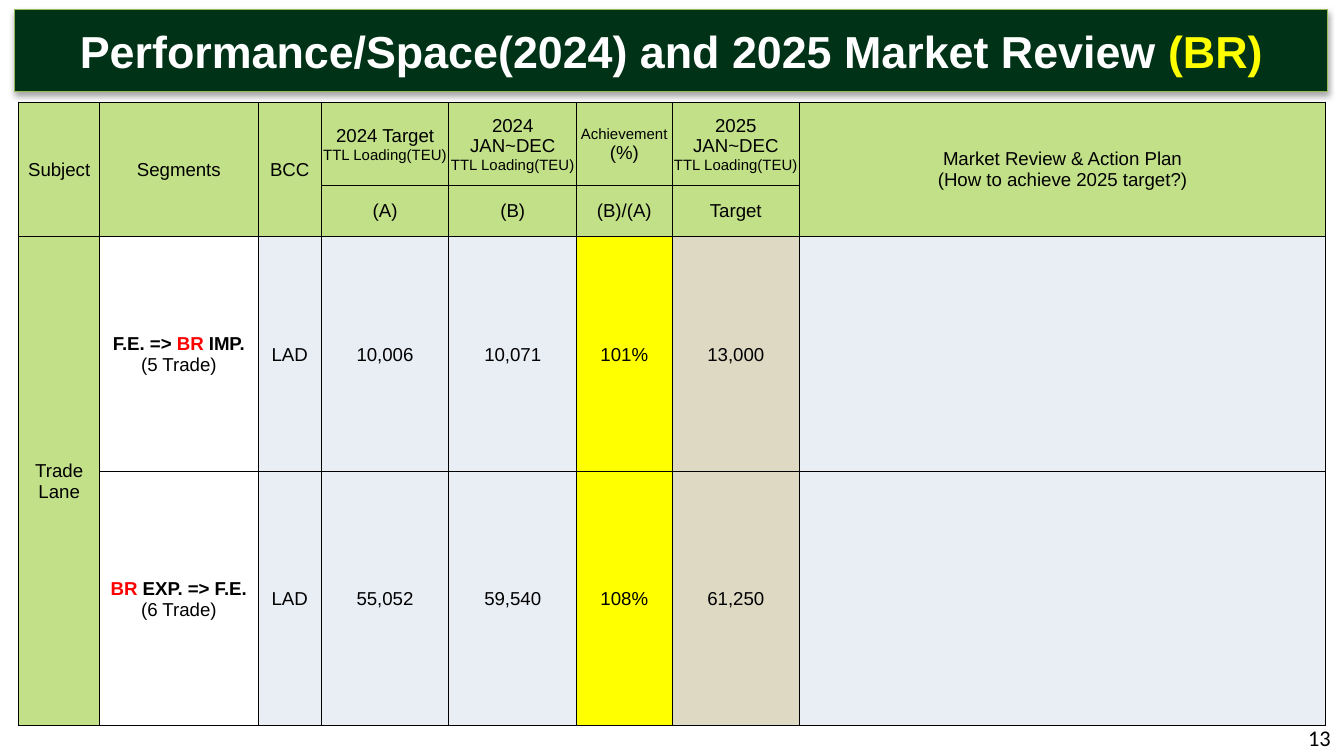
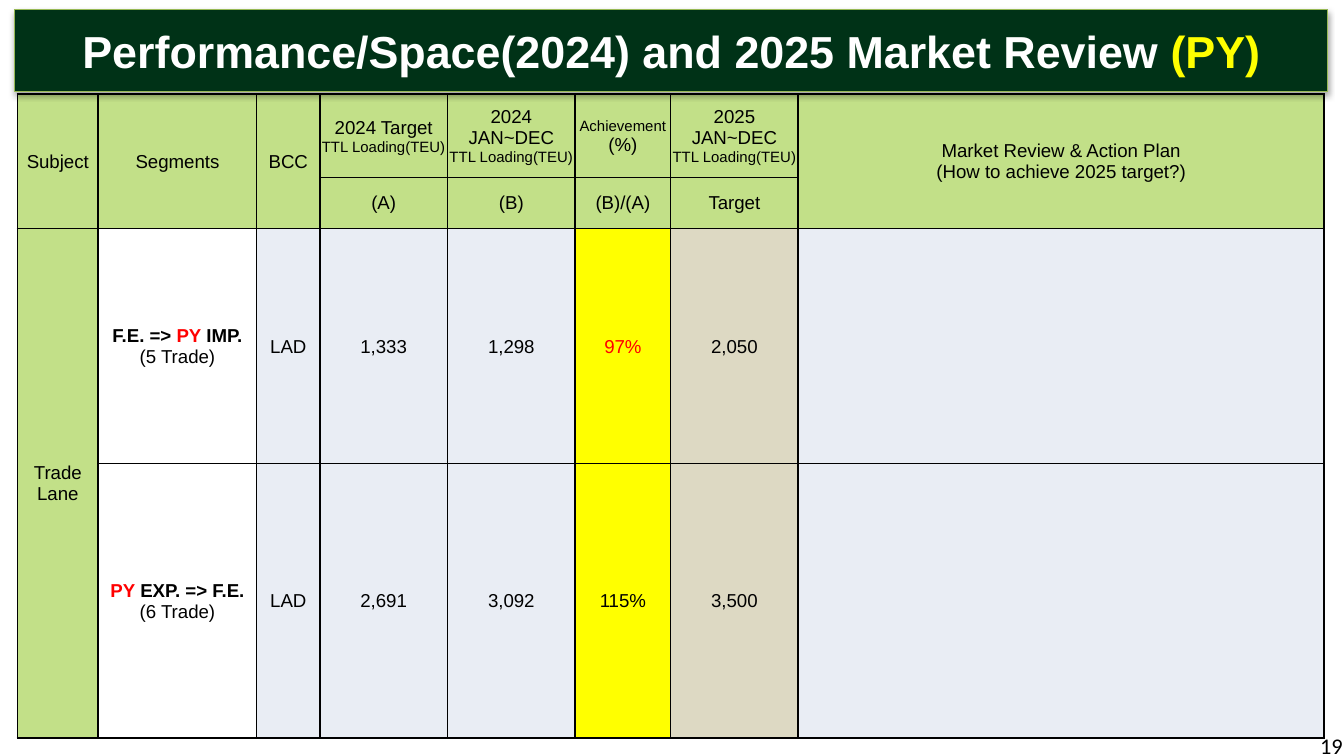
"""Build the 2024 performance and 2025 market review slides, one per country."""
from dataclasses import dataclass

from lxml.etree import Element, SubElement
from pptx import Presentation
from pptx.dml.color import RGBColor
from pptx.enum.shapes import MSO_SHAPE
from pptx.enum.text import MSO_ANCHOR, PP_ALIGN
from pptx.oxml.ns import qn
from pptx.slide import Slide
from pptx.table import Table, _Cell
from pptx.text.text import TextFrame
from pptx.util import Inches, Pt

COLORS = {
    "band": "003217",
    "band_edge": "98B955",
    "header": "C2E088",
    "body": "E9EDF4",
    "achievement": "FFFF00",
    "target": "DDD9C3",
    "alert": "FF0000",
    "black": "000000",
    "white": "FFFFFF",
}
COLUMN_WIDTHS = (0.6, 1.18, 0.47, 0.95, 0.95, 0.71, 0.95, 3.91)
HEADER_HEIGHTS = (0.62, 0.38)
BODY_FILLS = ("header", "white", "body", "body", "body", "achievement", "target", "body")


@dataclass(frozen=True)
class Piece:
    text: str
    size: int = 10
    color: str = "black"
    bold: bool = False
    font: str = "Arial"


Lines = list[list[Piece]]


@dataclass(frozen=True)
class Trade:
    target_2024: int
    loaded_2024: int
    target_2025: int


@dataclass(frozen=True)
class Review:
    country: str
    page: int
    page_at: tuple[float, float]
    table_at: tuple[float, float]
    trade_heights: tuple[float, float]
    border: float
    imports: Trade
    exports: Trade


LOADING = Piece("TTL Loading(TEU)", size=8)
TOP_HEADERS: list[Lines] = [
    [[Piece("Subject")]],
    [[Piece("Segments")]],
    [[Piece("BCC")]],
    [[Piece("2024 Target")], [LOADING]],
    [[Piece("2024 JAN~DEC")], [LOADING]],
    [[Piece("Achievement", size=8)], [Piece("(%)")]],
    [[Piece("2025 JAN~DEC")], [LOADING]],
    [[Piece("Market Review & Action Plan")], [Piece("(How to achieve 2025 target?)")]],
]
SUB_HEADERS = ("(A)", "(B)", "(B)/(A)", "Target")
REVIEWS = (
    Review("BR", 13, (7.67, 5.34), (0.14, 0.76), (1.75, 1.89), 0.5,
           Trade(10006, 10071, 13000), Trade(55052, 59540, 61250)),
    Review("PY", 19, (7.76, 5.4), (0.13, 0.7), (1.75, 2.04), 1,
           Trade(1333, 1298, 2050), Trade(2691, 3092, 3500)),
)


def rgb(name: str) -> RGBColor:
    return RGBColor.from_string(COLORS[name])


def write(frame: TextFrame, lines: Lines, align: PP_ALIGN = PP_ALIGN.CENTER) -> None:
    for index, line in enumerate(lines):
        paragraph = frame.paragraphs[0] if index == 0 else frame.add_paragraph()
        paragraph.alignment = align
        for piece in line:
            run = paragraph.add_run()
            run.text = piece.text
            run.font.name = piece.font
            run.font.size = Pt(piece.size)
            run.font.bold = piece.bold
            run.font.color.rgb = rgb(piece.color)


def style_cell(cell: _Cell, fill: str, border: float) -> None:
    cell.vertical_anchor = MSO_ANCHOR.MIDDLE
    cell.margin_left = cell.margin_right = cell.margin_top = Inches(0.01)
    cell.margin_bottom = Inches(0)
    cell.fill.solid()
    cell.fill.fore_color.rgb = rgb(fill)
    properties = cell._tc.get_or_add_tcPr()
    for position, side in enumerate(("lnL", "lnR", "lnT", "lnB")):
        edge = Element(qn(f"a:{side}"), w=str(Pt(border)))
        paint = SubElement(edge, qn("a:solidFill"))
        SubElement(paint, qn("a:srgbClr"), val=COLORS["black"])
        properties.insert(position, edge)


def trade_cells(segment: Lines, trade: Trade) -> list[Lines]:
    ratio = trade.loaded_2024 / trade.target_2024
    achievement = Piece(f"{ratio:.0%}", color="alert" if ratio < 1 else "black")
    return [
        segment,
        [[Piece("LAD")]],
        [[Piece(f"{trade.target_2024:,}")]],
        [[Piece(f"{trade.loaded_2024:,}")]],
        [[achievement]],
        [[Piece(f"{trade.target_2025:,}")]],
    ]


def fill_row(table: Table, row: int, first_column: int, contents: list[Lines]) -> None:
    for column, lines in enumerate(contents, first_column):
        write(table.cell(row, column).text_frame, lines)


def add_review_table(slide: Slide, review: Review) -> None:
    heights = HEADER_HEIGHTS + review.trade_heights
    left, top = map(Inches, review.table_at)
    table = slide.shapes.add_table(
        len(heights), len(COLUMN_WIDTHS), left, top,
        Inches(sum(COLUMN_WIDTHS)), Inches(sum(heights)),
    ).table
    table.first_row = table.horz_banding = False
    for column, width in zip(table.columns, COLUMN_WIDTHS):
        column.width = Inches(width)
    for index, height in enumerate(heights):
        table.rows[index].height = Inches(height)
        for column, body_fill in enumerate(BODY_FILLS):
            fill = "header" if index < len(HEADER_HEIGHTS) else body_fill
            style_cell(table.cell(index, column), fill, review.border)
    for row, column in ((0, 0), (0, 1), (0, 2), (0, 7), (2, 0)):
        table.cell(row, column).merge(table.cell(row + 1, column))

    country = Piece(review.country, color="alert", bold=True)
    import_segment = [
        [Piece("F.E. => ", bold=True), country, Piece(" IMP.", bold=True)],
        [Piece("(5 Trade)")],
    ]
    export_segment = [
        [country, Piece(" EXP. => F.E.", bold=True)],
        [Piece("(6 Trade)")],
    ]
    fill_row(table, 0, 0, TOP_HEADERS)
    fill_row(table, 1, 3, [[[Piece(label)]] for label in SUB_HEADERS])
    fill_row(table, 2, 0, [[[Piece("Trade Lane")]]])
    fill_row(table, 2, 1, trade_cells(import_segment, review.imports))
    fill_row(table, 3, 1, trade_cells(export_segment, review.exports))


def add_page_number(slide: Slide, review: Review) -> None:
    left, top = map(Inches, review.page_at)
    frame = slide.shapes.add_textbox(left, top, Inches(2.33), Inches(0.3)).text_frame
    frame.word_wrap = True
    write(frame, [[Piece(str(review.page), size=12, font="Calibri")]], PP_ALIGN.RIGHT)


def add_title_band(slide: Slide, country: str) -> None:
    band = slide.shapes.add_shape(
        MSO_SHAPE.RECTANGLE, Inches(0.11), Inches(0.07), Inches(9.77), Inches(0.61)
    )
    band.fill.solid()
    band.fill.fore_color.rgb = rgb("band")
    band.line.color.rgb = rgb("band_edge")
    band.line.width = Pt(0.75)
    band.shadow.inherit = False
    effects = band._element.spPr.find(qn("a:effectLst"))
    shadow = SubElement(
        effects, qn("a:outerShdw"), blurRad=str(Pt(3.1)), dist=str(Pt(1.8)),
        dir="5400000", rotWithShape="0",
    )
    shade = SubElement(shadow, qn("a:srgbClr"), val=COLORS["black"])
    SubElement(shade, qn("a:alpha"), val="35000")
    band.text_frame.word_wrap = True
    band.text_frame.vertical_anchor = MSO_ANCHOR.MIDDLE
    write(band.text_frame, [[
        Piece("Performance/Space(2024) and 2025 Market Review ", 24, "white", True),
        Piece(f"({country})", 24, "achievement", True),
    ]])


def main() -> None:
    presentation = Presentation()
    presentation.slide_width = Inches(10)
    presentation.slide_height = Inches(10) * 9 // 16
    for review in REVIEWS:
        slide = presentation.slides.add_slide(presentation.slide_layouts[6])
        add_review_table(slide, review)
        add_page_number(slide, review)
        add_title_band(slide, review.country)
    presentation.save("out.pptx")


if __name__ == "__main__":
    main()
